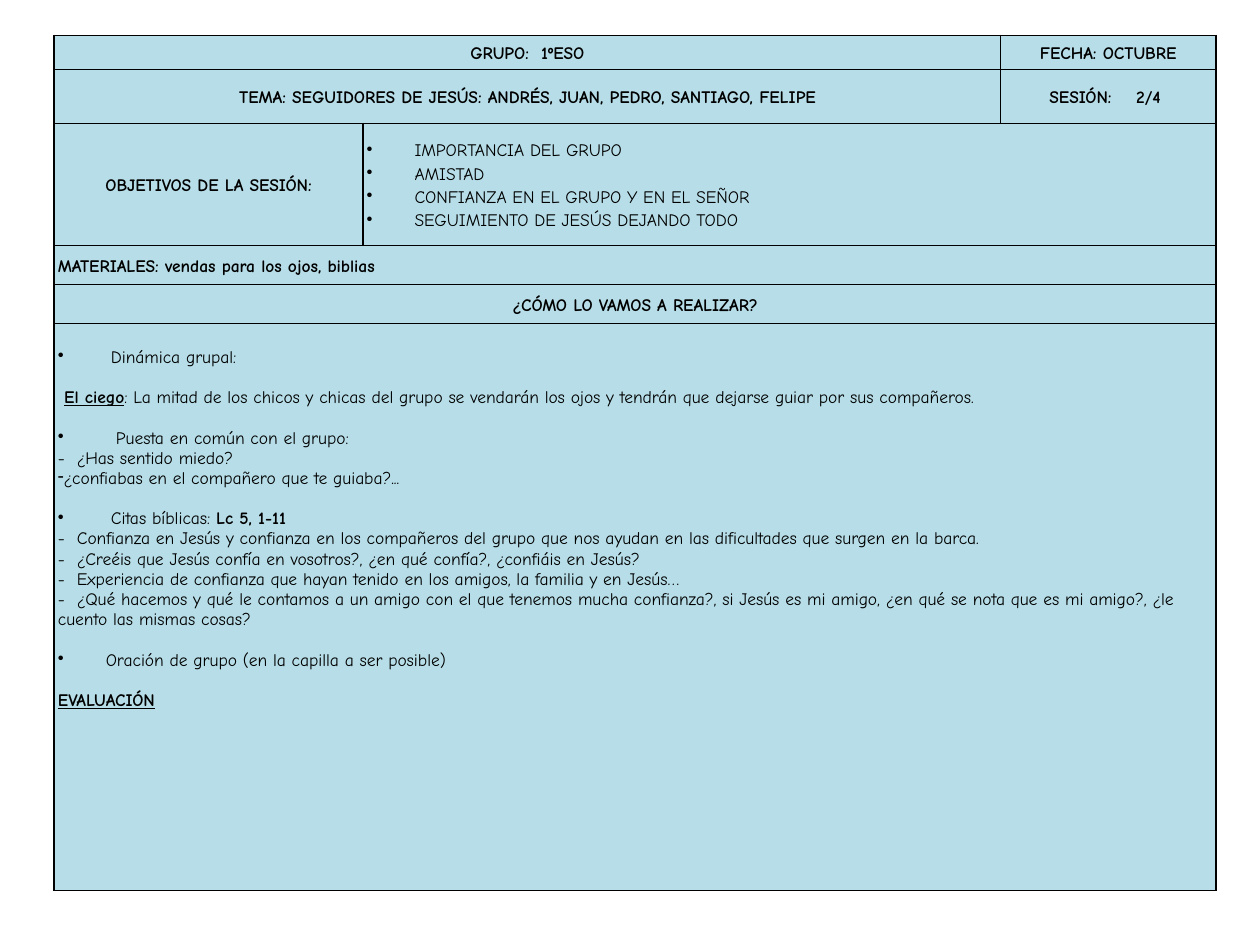
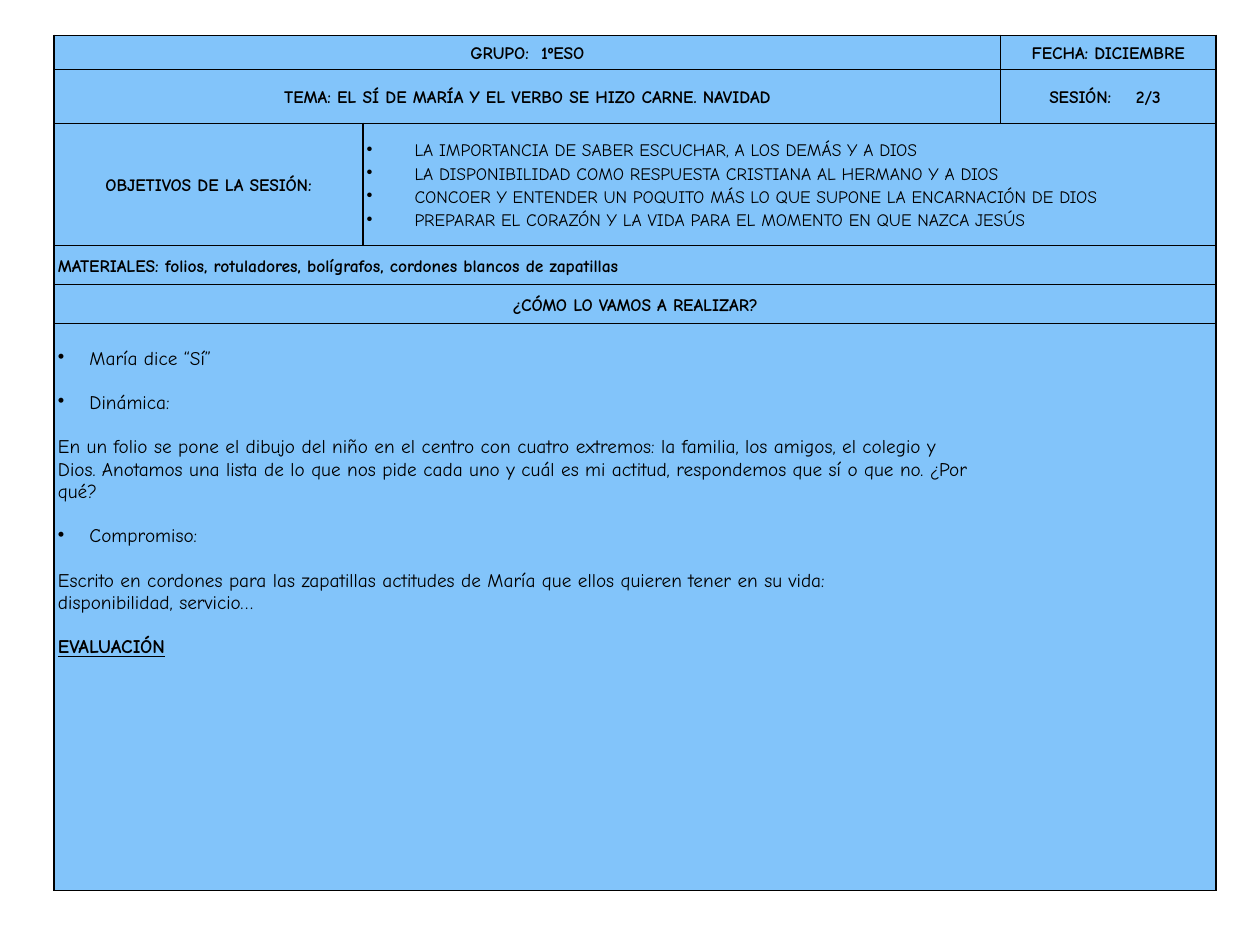
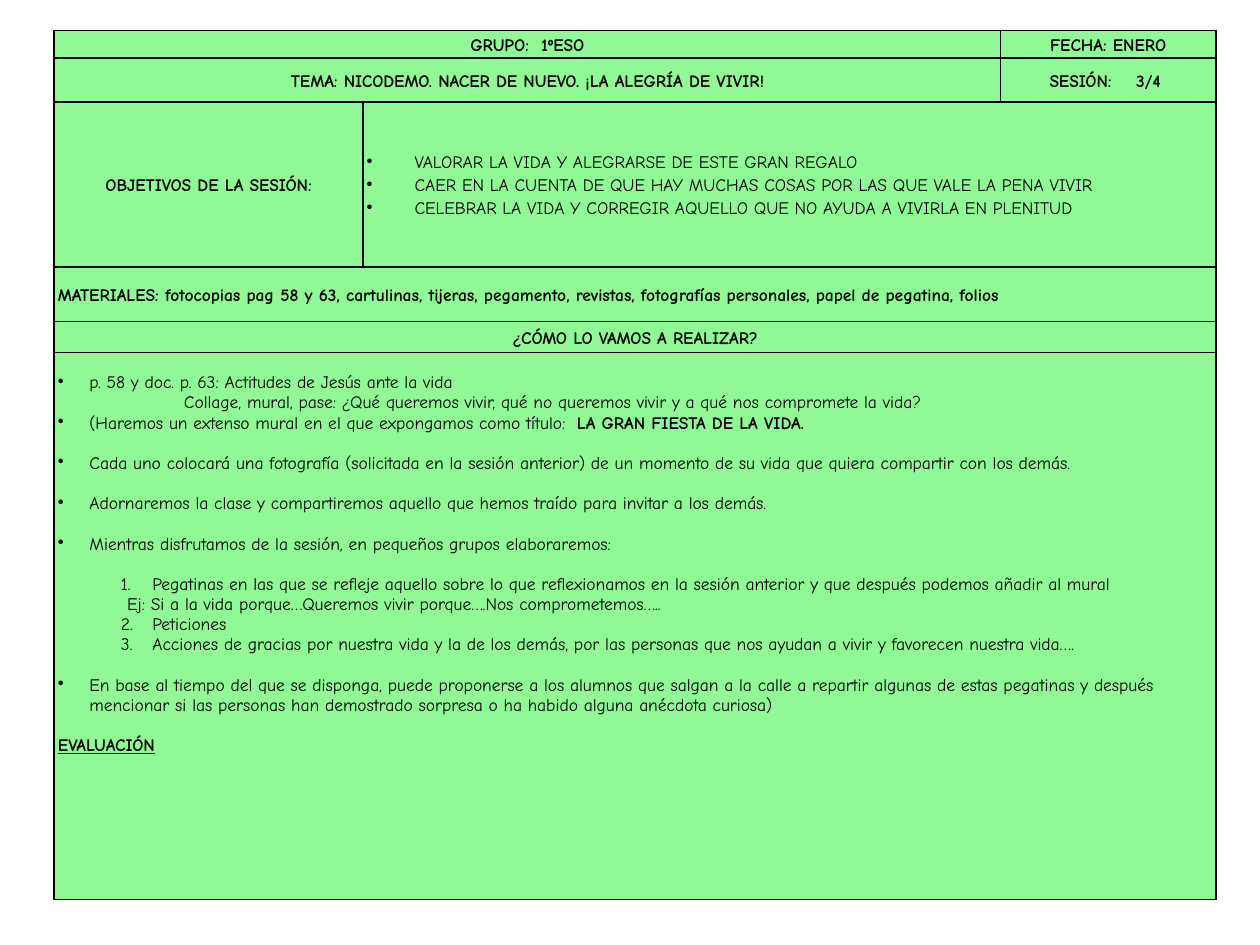
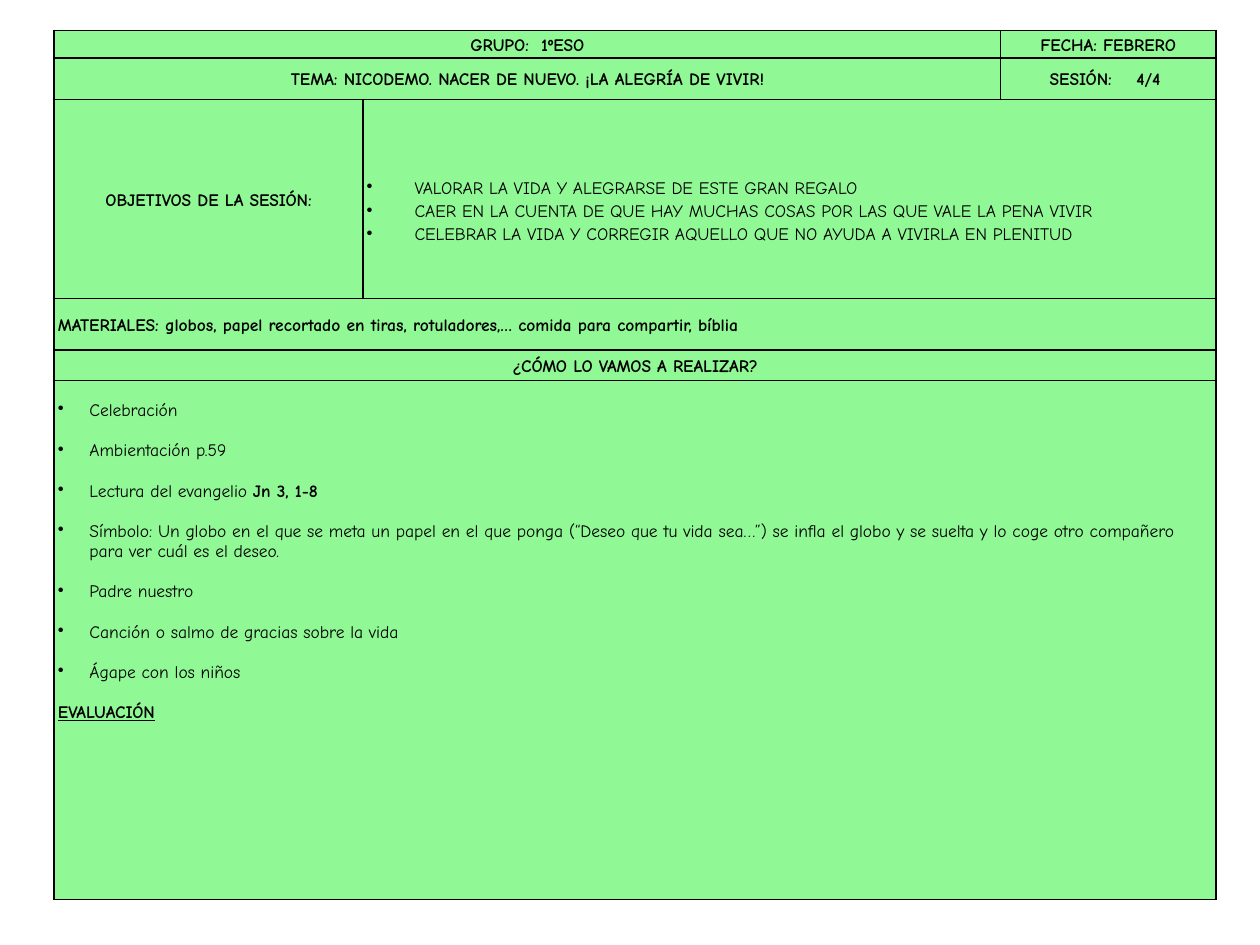
"""Builds four lesson-plan slides, each one bordered table with its own colour."""
import dataclasses

import lxml.etree
import pptx
import pptx.dml.color
import pptx.enum.text
import pptx.oxml.ns
import pptx.util

COLORS = {"ink": "000000", "october": "B7DEE8", "december": "82C4FA", "winter": "90F895"}
FONT = "Comic Neue"
CENTER = pptx.enum.text.PP_ALIGN.CENTER
LEFT = pptx.enum.text.PP_ALIGN.LEFT
COLUMNS = (24.5, 50.6, 17.1)
EARLY_ROWS = (2.7, 4.3, 9.7, 3.1, 3.1, 45)
ROW_SPANS = ((0, 0, 1), (1, 0, 1), (2, 1, 2), (3, 0, 2), (4, 0, 2), (5, 0, 2))
WIDE = (" ", 3.5)
WIDER = (" ", 10.5)


@dataclasses.dataclass
class Line:
    runs: tuple
    bullet: str = ""
    margin: float = 0
    hanging: float = 0
    apart: bool = True
    start: int = 1


def plain(*runs, margin=0, apart=False):
    return Line(runs, margin=margin, apart=apart)


def point(*runs, hanging=2.5, apart=True):
    return Line(runs, "•", hanging, hanging, apart)


def numbered(text, start, apart=False):
    return Line((text,), "number", 7.5, 2.5, apart, start)


def dashed(text):
    return plain("-", WIDE, text)


EVALUATION = plain(("EVALUACIÓN", "bu"), apart=True)


class LessonDeck:
    def __init__(self):
        self.presentation = pptx.Presentation()
        self.presentation.slide_width = pptx.util.Inches(10)
        self.presentation.slide_height = pptx.util.Inches(7.5)
        self.unit = self.presentation.slide_width / 100
        self.slide = None
        self.fill = None

    def grid(self, count):
        return pptx.util.Emu(round(count * self.unit))

    def start_slide(self, fill):
        self.slide = self.presentation.slides.add_slide(self.presentation.slide_layouts[6])
        self.fill = fill

    def add_table(self, top, rows):
        frame = self.slide.shapes.add_table(
            len(rows), len(COLUMNS), self.grid(4.3), self.grid(top),
            self.grid(sum(COLUMNS)), self.grid(sum(rows)))
        table = frame.table
        table.first_row = table.horz_banding = False
        for column, width in zip(table.columns, COLUMNS):
            column.width = self.grid(width)
        for row, height in zip(table.rows, rows):
            row.height = self.grid(height)
        for cell in table.iter_cells():
            self.style_cell(cell)
        for row, first, last in ROW_SPANS:
            table.cell(row, first).merge(table.cell(row, last))
        return table

    def style_cell(self, cell):
        cell.margin_left = cell.margin_right = self.grid(0.3)
        cell.margin_top = cell.margin_bottom = 0
        cell.vertical_anchor = pptx.enum.text.MSO_ANCHOR.MIDDLE
        properties = cell._tc.get_or_add_tcPr()
        for side in ("a:lnL", "a:lnR", "a:lnT", "a:lnB"):
            border = self.add_xml(properties, side, w=pptx.util.Pt(1))
            paint = self.add_xml(border, "a:solidFill")
            self.add_xml(paint, "a:srgbClr", val=COLORS["ink"])
        cell.fill.solid()
        cell.fill.fore_color.rgb = pptx.dml.color.RGBColor.from_string(COLORS[self.fill])

    def add_xml(self, parent, tag, **attributes):
        values = {name: str(value) for name, value in attributes.items()}
        return lxml.etree.SubElement(parent, pptx.oxml.ns.qn(tag), values)

    def write_cell(self, cell, lines, size=10, bold=False, align=LEFT, spacing=1.15):
        frame = cell.text_frame
        for index, line in enumerate(lines):
            paragraph = frame.add_paragraph() if index else frame.paragraphs[0]
            paragraph.alignment = align
            paragraph.line_spacing = spacing
            if index and line.apart:
                paragraph.space_before = pptx.util.Pt(size * 1.15)
            self.indent(paragraph, line)
            for run in line.runs:
                self.add_run(paragraph, run, size, bold)

    def indent(self, paragraph, line):
        properties = paragraph._p.get_or_add_pPr()
        properties.set("marL", str(self.grid(line.margin)))
        properties.set("indent", str(self.grid(-line.hanging)))
        if line.bullet == "number":
            self.add_xml(properties, "a:buAutoNum", type="arabicPeriod", startAt=line.start)
        elif line.bullet:
            self.add_xml(properties, "a:buChar", char=line.bullet)
        else:
            self.add_xml(properties, "a:buNone")

    def add_run(self, paragraph, content, size, bold):
        text, style = (content, "") if isinstance(content, str) else content
        run = paragraph.add_run()
        run.text = text
        run.font.name = FONT
        run.font.size = pptx.util.Pt(size)
        run.font.color.rgb = pptx.dml.color.RGBColor.from_string(COLORS["ink"])
        if isinstance(style, str):
            run.font.bold = bold or "b" in style
            run.font.underline = "u" in style
        else:
            run.font.bold = bold
            run._r.get_or_add_rPr().set("spc", str(round(style * 100)))

    def add_lesson(self, fill, top, rows, month, theme, session, goals, materials, body,
                   size=10, body_gap=1.6, goals_gap=0):
        self.start_slide(fill)
        table = self.add_table(top, rows)
        headings = {
            (0, 0): ("GRUPO:", WIDE, "1ºESO"),
            (0, 2): (f"FECHA: {month}",),
            (1, 0): (f"TEMA: {theme}",),
            (1, 2): ("SESIÓN:", WIDER, f"{session} "),
            (2, 0): ("OBJETIVOS DE LA SESIÓN:",),
            (4, 0): ("¿CÓMO LO VAMOS A REALIZAR?",),
        }
        for position, runs in headings.items():
            self.write_cell(table.cell(*position), [plain(*runs)], bold=True, align=CENTER)
        self.write_cell(table.cell(3, 0), [plain(f"MATERIALES: {materials}")], bold=True)
        goals_cell = table.cell(2, 1)
        goals_cell.margin_top = self.grid(goals_gap)
        self.write_cell(goals_cell, [point(goal, hanging=3.8, apart=False) for goal in goals])
        body_cell = table.cell(5, 0)
        body_cell.vertical_anchor = pptx.enum.text.MSO_ANCHOR.TOP
        body_cell.margin_top = self.grid(body_gap)
        self.write_cell(body_cell, body + [EVALUATION], size=size, spacing=1.0)


def main():
    deck = LessonDeck()
    deck.add_lesson(
        "october", 2.8, EARLY_ROWS, "OCTUBRE",
        "SEGUIDORES DE JESÚS: ANDRÉS, JUAN, PEDRO, SANTIAGO, FELIPE", "2/4",
        ["IMPORTANCIA DEL GRUPO", "AMISTAD", "CONFIANZA EN EL GRUPO Y EN EL SEÑOR",
         "SEGUIMIENTO DE JESÚS DEJANDO TODO"],
        "vendas para los ojos, biblias",
        [point("Dinámica grupal:", hanging=4.2),
         plain(("El ciego", "bu"), ": La mitad de los chicos y chicas del grupo se vendarán los "
               "ojos y tendrán que dejarse guiar por sus compañeros.", margin=0.5, apart=True),
         point("Puesta en común con el grupo:", hanging=4.6),
         dashed("¿Has sentido miedo?"),
         Line(("¿confiabas en el compañero que te guiaba?...",), "-", apart=False),
         point("Citas bíblicas: ", ("Lc 5, 1-11", "b"), hanging=4.2),
         dashed("Confianza en Jesús y confianza en los compañeros del grupo que nos ayudan "
                "en las dificultades que surgen en la barca."),
         dashed("¿Creéis que Jesús confía en vosotros?, ¿en qué confía?, ¿confiáis en Jesús?"),
         dashed("Experiencia de confianza que hayan tenido en los amigos, la familia y en "
                "Jesús…"),
         dashed("¿Qué hacemos y qué le contamos a un amigo con el que tenemos mucha "
                "confianza?, si Jesús es mi amigo, ¿en qué se nota que es mi amigo?, ¿le "
                "cuento las mismas cosas?"),
         point("Oración de grupo (en la capilla a ser posible)", hanging=3.8)],
        body_gap=1.9)
    deck.add_lesson(
        "december", 2.8, EARLY_ROWS, "DICIEMBRE",
        "EL SÍ DE MARÍA Y EL VERBO SE HIZO CARNE. NAVIDAD", "2/3",
        ["LA IMPORTANCIA DE SABER ESCUCHAR, A LOS DEMÁS Y A DIOS",
         "LA DISPONIBILIDAD COMO RESPUESTA CRISTIANA AL HERMANO Y A DIOS",
         "CONCOER Y ENTENDER UN POQUITO MÁS LO QUE SUPONE LA ENCARNACIÓN DE DIOS",
         "PREPARAR EL CORAZÓN Y LA VIDA PARA EL MOMENTO EN QUE NAZCA JESÚS"],
        "folios, rotuladores, bolígrafos, cordones blancos de zapatillas",
        [point("María dice “Sí”"),
         point("Dinámica:"),
         plain("En un folio se pone el dibujo del niño en el centro con cuatro extremos: la "
               "familia, los amigos, el colegio y", apart=True),
         plain("Dios. Anotamos una lista de lo que nos pide cada uno y cuál es mi actitud, "
               "respondemos que sí o que no. ¿Por"),
         plain("qué?"),
         point("Compromiso:"),
         plain("Escrito en cordones para las zapatillas actitudes de María que ellos quieren "
               "tener en su vida:", apart=True),
         plain("disponibilidad, servicio…")],
        size=11, body_gap=1.9)
    rebirth = "NICODEMO. NACER DE NUEVO. ¡LA ALEGRÍA DE VIVIR!"
    life_goals = ["VALORAR LA VIDA Y ALEGRARSE DE ESTE GRAN REGALO",
                  "CAER EN LA CUENTA DE QUE HAY MUCHAS COSAS POR LAS QUE VALE LA PENA VIVIR",
                  "CELEBRAR LA VIDA Y CORREGIR AQUELLO QUE NO AYUDA A VIVIRLA EN PLENITUD"]
    deck.add_lesson(
        "winter", 2.4, (2.2, 3.5, 13.1, 4.3, 2.5, 43.4), "ENERO", rebirth, "3/4", life_goals,
        "fotocopias pag 58 y 63, cartulinas, tijeras, pegamento, revistas, fotografías "
        "personales, papel de pegatina, folios",
        [point("p. 58 y doc. p. 63: Actitudes de Jesús ante la vida"),
         plain("Collage, mural, pase: ¿Qué queremos vivir, qué no queremos vivir y a qué nos "
               "compromete la vida?", margin=10),
         point("(Haremos un extenso mural en el que expongamos como título:", WIDE,
               ("LA GRAN FIESTA DE LA VIDA.", "b"), apart=False),
         point("Cada uno colocará una fotografía (solicitada en la sesión anterior) de un "
               "momento de su vida que quiera compartir con los demás."),
         point("Adornaremos la clase y compartiremos aquello que hemos traído para invitar a "
               "los demás."),
         point("Mientras disfrutamos de la sesión, en pequeños grupos elaboraremos:"),
         numbered("Pegatinas en las que se refleje aquello sobre lo que reflexionamos en la "
                  "sesión anterior y que después podemos añadir al mural", 1, apart=True),
         plain("Ej: Si a la vida porque…Queremos vivir porque….Nos comprometemos…..",
               margin=5.5),
         numbered("Peticiones", 2),
         numbered("Acciones de gracias por nuestra vida y la de los demás, por las personas "
                  "que nos ayudan a vivir y favorecen nuestra vida….", 2),
         point("En base al tiempo del que se disponga, puede proponerse a los alumnos que "
               "salgan a la calle a repartir algunas de estas pegatinas y después mencionar "
               "si las personas han demostrado sorpresa o ha habido alguna anécdota "
               "curiosa)")])
    deck.add_lesson(
        "winter", 2.4, (2.2, 3.3, 15.8, 4.1, 2.4, 41.2), "FEBRERO", rebirth, "4/4", life_goals,
        "globos, papel recortado en tiras, rotuladores,… comida para compartir, bíblia",
        [point("Celebración"),
         point("Ambientación p.59"),
         point("Lectura del evangelio ", ("Jn 3, 1-8", "b")),
         point("Símbolo: Un globo en el que se meta un papel en el que ponga (“Deseo que tu "
               "vida sea…”) se infla el globo y se suelta y lo coge otro compañero para ver "
               "cuál es el deseo."),
         point("Padre nuestro"),
         point("Canción o salmo de gracias sobre la vida"),
         point("Ágape con los niños")],
        goals_gap=1.8)
    deck.presentation.save("out.pptx")


if __name__ == "__main__":
    main()
